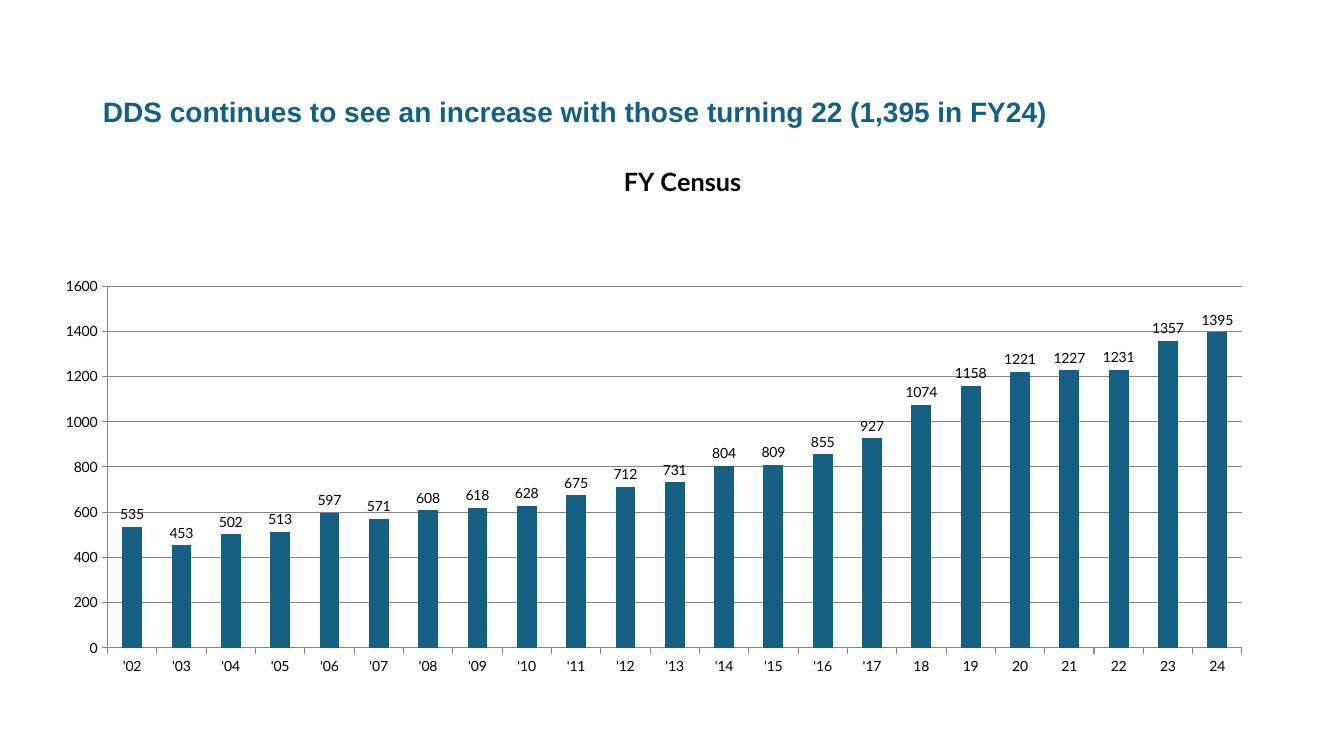
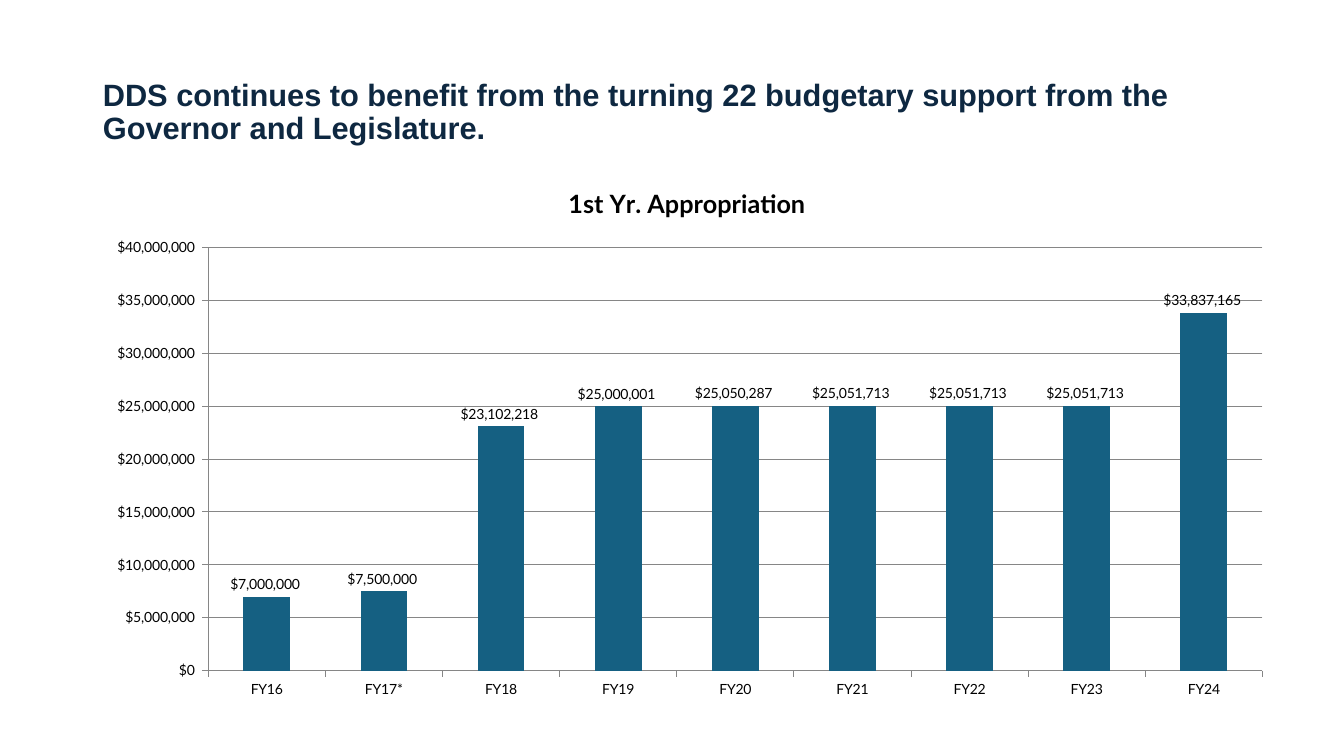
import lxml.etree
import pptx
import pptx.chart.data
import pptx.dml.color
import pptx.enum.chart
import pptx.enum.text
import pptx.oxml.ns
import pptx.util

Inches = pptx.util.Inches
Pt = pptx.util.Pt
qn = pptx.oxml.ns.qn

BLUE, NAVY, BLACK, GREY = "156082", "0E2841", "000000", "868686"
DOLLARS = '"$"#,##0_);[Red]\\("$"#,##0\\)'


def rgb(code):
    return pptx.dml.color.RGBColor.from_string(code)


class Deck:
    """Holds the shared style and the current slide."""

    title_font = "Arial"
    chart_font = "Lato"
    title_box = (0.92, 0.4, 11.5, 1.45)

    def __init__(self):
        self.prs = pptx.Presentation()
        self.prs.slide_width = Inches(13.33)
        self.prs.slide_height = Inches(7.5)
        self.s = None

    def slide(self):
        self.s = self.prs.slides.add_slide(self.prs.slide_layouts[5])

    def title(self, text, size, color):
        sp = self.s.shapes.title
        sp.left, sp.top, sp.width, sp.height = map(Inches, self.title_box)
        tf = sp.text_frame
        tf.word_wrap = True
        tf.auto_size = pptx.enum.text.MSO_AUTO_SIZE.NONE
        tf.vertical_anchor = pptx.enum.text.MSO_ANCHOR.MIDDLE
        p = tf.paragraphs[0]
        p.alignment = pptx.enum.text.PP_ALIGN.LEFT
        p.line_spacing = 0.9
        self.run(p, text, size, color, self.title_font)

    def run(self, p, text, size, color, font):
        r = p.add_run()
        r.text = text
        r.font.size = Pt(size)
        r.font.bold = True
        r.font.name = font
        r.font.color.rgb = rgb(color)

    def layout(self, parent, index, **fractions):
        for old in parent.findall(qn("c:layout")):
            parent.remove(old)
        layout = lxml.etree.Element(qn("c:layout"))
        manual = lxml.etree.SubElement(layout, qn("c:manualLayout"))
        settings = {"xMode": "edge", "yMode": "edge", **fractions}
        if "w" in fractions:
            settings = {"layoutTarget": "inner", **settings}
        for tag, value in settings.items():
            lxml.etree.SubElement(manual, qn(f"c:{tag}"), val=str(value))
        parent.insert(index, layout)

    def axis(self, axis):
        axis.major_tick_mark = pptx.enum.chart.XL_TICK_MARK.OUTSIDE
        axis.minor_tick_mark = pptx.enum.chart.XL_TICK_MARK.NONE
        self.line(axis.format.line)

    def line(self, line):
        line.color.rgb = rgb(GREY)
        line.width = Pt(0.75)

    def columns(self, box, name, cats, vals, top, step, fmt, title_at, plot):
        data = pptx.chart.data.CategoryChartData(number_format=fmt)
        data.categories = cats
        data.add_series(name, vals)
        kind = pptx.enum.chart.XL_CHART_TYPE.COLUMN_CLUSTERED
        chart = self.s.shapes.add_chart(kind, *map(Inches, box), data).chart
        chart.has_legend = False
        chart.font.size = Pt(10)
        chart.font.name = self.chart_font
        chart.font.color.rgb = rgb(BLACK)

        p = chart.chart_title.text_frame.paragraphs[0]
        self.run(p, name, 18, BLACK, self.chart_font)
        chart.chart_title.include_in_layout = False
        x, y = title_at
        self.layout(chart.element.xpath("c:chart/c:title")[0], 1, x=x, y=y)
        x, y, w, h = plot
        self.layout(chart.element.xpath("c:chart/c:plotArea")[0], 0,
                    x=x, y=y, w=w, h=h)

        self.axis(chart.category_axis)
        value_axis = chart.value_axis
        self.axis(value_axis)
        value_axis.minimum_scale = 0
        value_axis.maximum_scale = top
        value_axis.major_unit = step
        value_axis.has_major_gridlines = True
        self.line(value_axis.major_gridlines.format.line)
        value_axis.tick_labels.number_format = fmt
        value_axis.tick_labels.number_format_is_linked = False

        bars = chart.plots[0]
        bars.gap_width = 150
        bars.vary_by_categories = False
        fill = bars.series[0].format.fill
        fill.solid()
        fill.fore_color.rgb = rgb(BLUE)
        bars.has_data_labels = True
        labels = bars.data_labels
        labels.show_value = True
        labels.position = pptx.enum.chart.XL_LABEL_POSITION.OUTSIDE_END
        labels.number_format = fmt
        labels.number_format_is_linked = False


def main():
    deck = Deck()

    deck.slide()
    deck.title("DDS continues to see an increase with those turning 22 "
               "(1,395 in FY24)", 20, BLUE)
    years = [f"'{y:02}" for y in range(2, 18)] + [str(y) for y in range(18, 25)]
    census = [535, 453, 502, 513, 597, 571, 608, 618, 628, 675, 712, 731,
              804, 809, 855, 927, 1074, 1158, 1221, 1227, 1231, 1357, 1395]
    deck.columns((0.25, 1.33, 12.95, 5.99), "FY Census", years, census,
                 1600, 200, "General", (0.455, 0.04),
                 (0.063, 0.252, 0.869, 0.599))

    deck.slide()
    deck.title("DDS continues to benefit from the turning 22 budgetary support "
               "from the Governor and Legislature.", 22, NAVY)
    years = ["FY16", "FY17*"] + [f"FY{y}" for y in range(18, 25)]
    funding = [7000000, 7500000, 23102218, 25000001, 25050287,
               25051713, 25051713, 25051713, 33837165]
    deck.columns((0.39, 1.27, 12.69, 6.09), "1st Yr. Appropriation", years,
                 funding, 40000000, 5000000, DOLLARS, (0.41, 0.085),
                 (0.132, 0.195, 0.824, 0.689))

    deck.prs.save("out.pptx")


if __name__ == "__main__":
    main()
